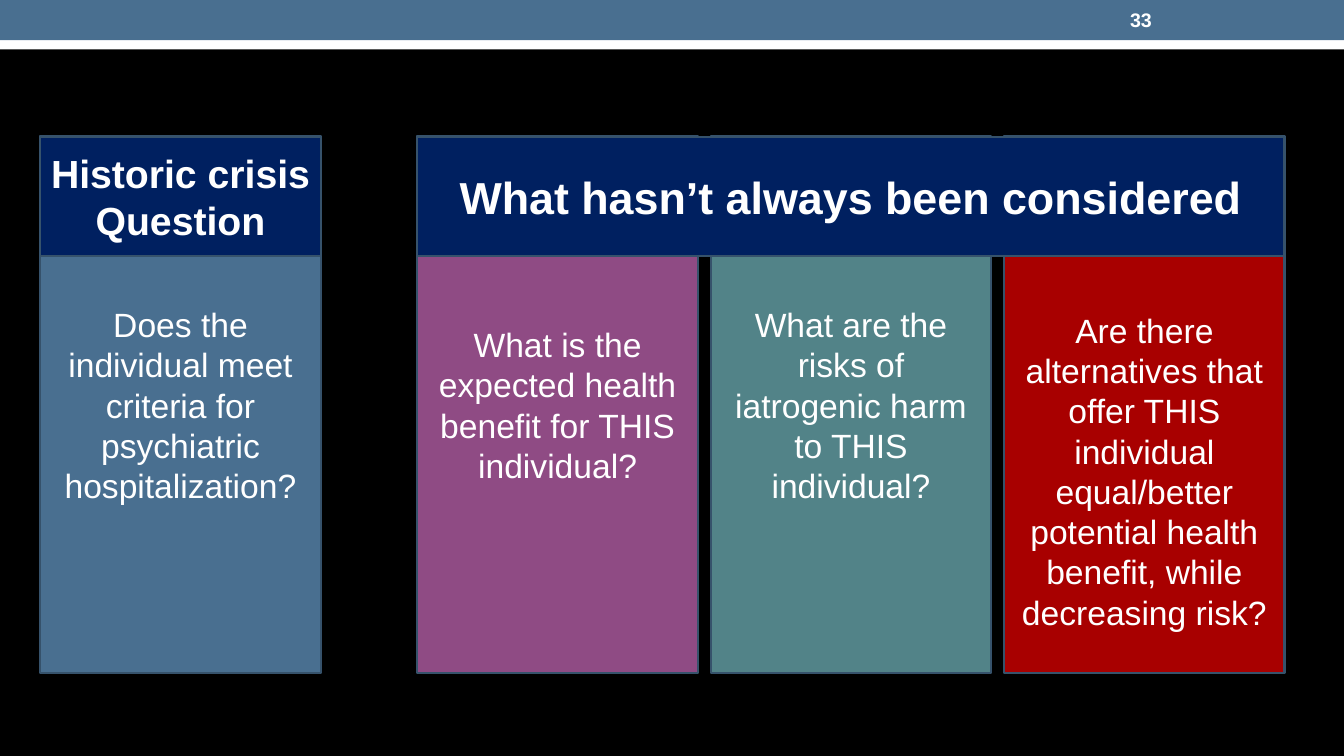
from dataclasses import dataclass

from pptx import Presentation
from pptx.dml.color import RGBColor
from pptx.enum.shapes import MSO_SHAPE as Preset
from pptx.enum.text import MSO_ANCHOR as Anchor, PP_ALIGN as Align
from pptx.util import Inches, Pt

COLORS = {
    "background": "000000",
    "white": "FFFFFF",
    "steel": "496F90",
    "outline": "36526B",
    "navy": "002060",
    "purple": "8F4B84",
    "teal": "528388",
    "red": "A80000",
}
FONT = "Arial"
SLIDE_WIDTH, SLIDE_HEIGHT = 13.33, 7.5
COLUMN_TOP, COLUMN_WIDTH, COLUMN_HEIGHT = 1.35, 2.78, 5.33
HEADER_TOP, HEADER_HEIGHT = 1.36, 1.18
HISTORIC_LEFT, NEW_LEFT, COLUMN_PITCH = 0.4, 4.14, 2.91


@dataclass
class Box:
    left: float
    top: float
    width: float
    height: float
    fill: str
    text: str = ""
    size: int = 24
    bold: bool = False
    outlined: bool = True
    top_inset: float = 0.05


def rgb(name: str) -> RGBColor:
    return RGBColor.from_string(COLORS[name])


def write_text(shape, text: str, size: int, bold: bool, align: Align, top_inset: float = 0.05) -> None:
    frame = shape.text_frame
    frame_format = {
        "word_wrap": True,
        "vertical_anchor": Anchor.MIDDLE,
        "margin_top": Inches(top_inset),
    }
    for name, value in frame_format.items():
        setattr(frame, name, value)
    paragraph = frame.paragraphs[0]
    paragraph.alignment = align
    run = paragraph.add_run()
    run.text = text
    for name, value in {"name": FONT, "size": Pt(size), "bold": bold}.items():
        setattr(run.font, name, value)
    run.font.color.rgb = rgb("white")


def draw_box(slide, box: Box) -> None:
    bounds = (box.left, box.top, box.width, box.height)
    shape = slide.shapes.add_shape(Preset.RECTANGLE, *map(Inches, bounds))
    shape.shadow.inherit = False
    shape.fill.solid()
    shape.fill.fore_color.rgb = rgb(box.fill)
    if box.outlined:
        shape.line.color.rgb = rgb("outline")
        shape.line.width = Pt(1.5)
    else:
        shape.line.fill.background()
    if box.text:
        write_text(shape, box.text, box.size, box.bold, Align.CENTER, box.top_inset)


def column(left: float, fill: str, text: str, top_inset: float = 0.05) -> Box:
    return Box(left, COLUMN_TOP, COLUMN_WIDTH, COLUMN_HEIGHT, fill, text, top_inset=top_inset)


def header(left: float, width: float, text: str, size: int) -> Box:
    return Box(left, HEADER_TOP, width, HEADER_HEIGHT, "navy", text, size, bold=True)


BANDS = [
    Box(0, 0.24, SLIDE_WIDTH, 0.25, "white", outlined=False),
    Box(0, 0, SLIDE_WIDTH, 0.4, "steel", outlined=False),
]
COLUMNS = [
    column(HISTORIC_LEFT, "steel",
           "Does the individual meet criteria for psychiatric hospitalization?"),
    column(NEW_LEFT, "purple",
           "What is the expected health benefit for THIS individual?"),
    column(NEW_LEFT + COLUMN_PITCH, "teal",
           "What are the risks of iatrogenic harm to THIS individual?"),
    column(NEW_LEFT + 2 * COLUMN_PITCH, "red",
           "Are there alternatives that offer THIS individual equal/better "
           "potential health benefit, while decreasing risk?", top_inset=1.36),
]
HEADERS = [
    header(HISTORIC_LEFT, COLUMN_WIDTH, "Historic crisis Question", 28),
    header(NEW_LEFT, 2 * COLUMN_PITCH + COLUMN_WIDTH, "What hasn’t always been considered", 32),
]


def main() -> None:
    presentation = Presentation()
    presentation.slide_width = Inches(SLIDE_WIDTH)
    presentation.slide_height = Inches(SLIDE_HEIGHT)
    slide = presentation.slides.add_slide(presentation.slide_layouts[6])
    slide.background.fill.solid()
    slide.background.fill.fore_color.rgb = rgb("background")

    # Top bands and page number
    for band in BANDS:
        draw_box(slide, band)
    page_number = slide.shapes.add_textbox(*map(Inches, (11.11, 0.02, 1.56, 0.36)))
    write_text(page_number, "33", 14, True, Align.LEFT)

    # Question columns, then the headers over them
    for box in COLUMNS + HEADERS:
        draw_box(slide, box)

    presentation.save("out.pptx")


if __name__ == "__main__":
    main()
